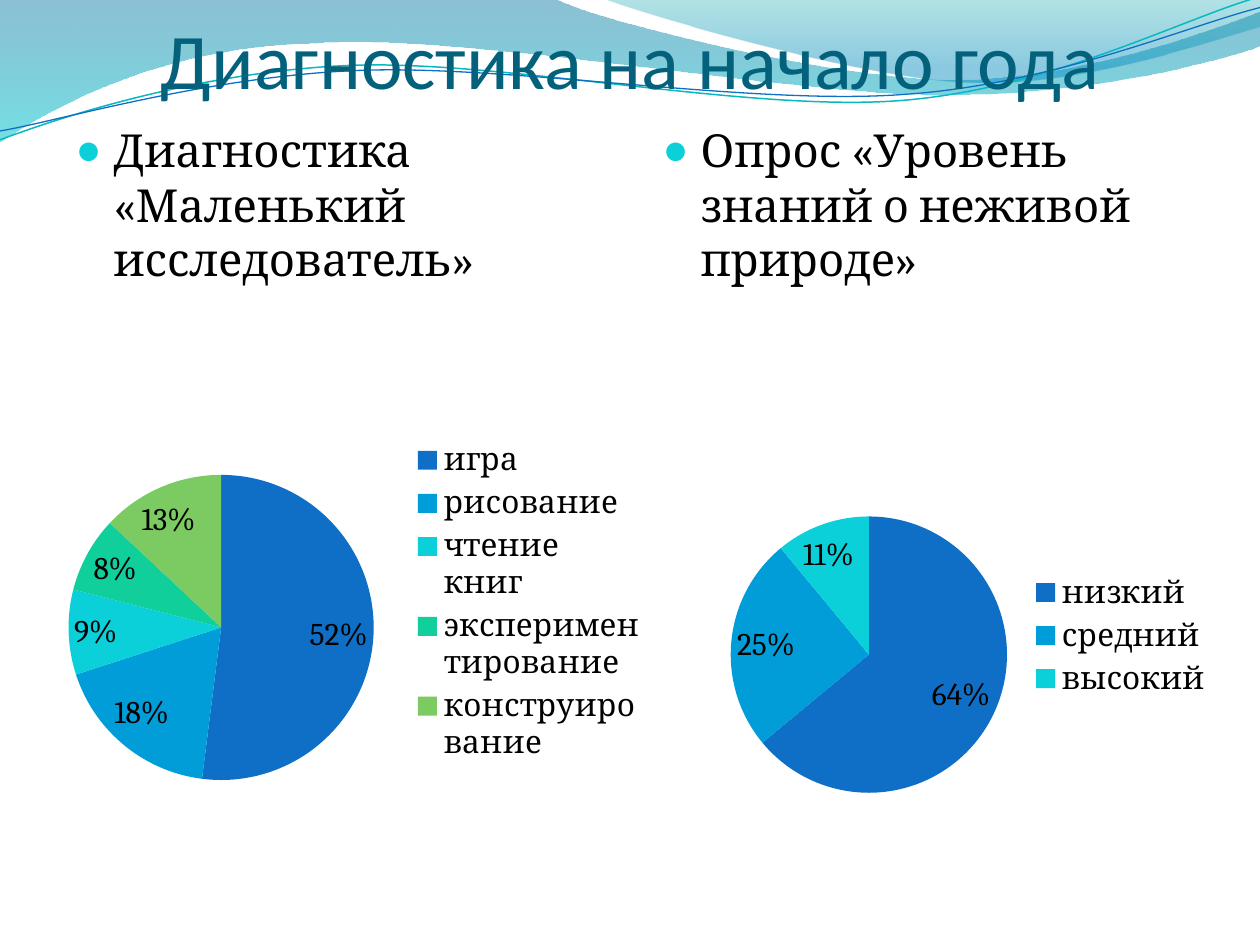
from lxml import etree
from pptx import Presentation
from pptx.chart.data import CategoryChartData
from pptx.dml.color import RGBColor
from pptx.enum.chart import XL_CHART_TYPE, XL_LABEL_POSITION, XL_LEGEND_POSITION
from pptx.enum.text import MSO_ANCHOR, MSO_AUTO_SIZE, PP_ALIGN
from pptx.oxml import parse_xml
from pptx.oxml.ns import nsdecls, qn
from pptx.util import Inches, Pt

TITLE = "Диагностика на начало года"
TITLE_BOX = (0.5, 0.13, 9, 0.71)
SLICE_COLOURS = ["0F6FC6", "009DD9", "0BD0D9", "10CF9B", "7CCA62"]

# Right topic first: its chart lies behind the left one.
TOPICS = [
    {"body": 2, "heading": "Опрос «Уровень знаний о неживой природе»",
     "heading_box": (5.16, 0.92, 4.42, 5.95), "chart_box": (5.16, 2.88, 4.57, 4.33),
     "shares": {"низкий": 64, "средний": 25, "высокий": 11},
     "plot": {"x": 0.14, "y": 0.28, "w": 0.48, "h": 0.51}},
    {"body": 1, "heading": "Диагностика «Маленький исследователь»",
     "heading_box": (0.5, 0.92, 4.42, 6.03), "chart_box": (0, 2.49, 5.24, 4.57),
     "shares": {"игра": 52, "рисование": 18, "чтение книг": 9,
                "экспериментирование": 8, "конструирование": 13},
     "plot": {"x": 0.08, "y": 0.28, "w": 0.51, "h": 0.53}},
]

# A step of two numbers is a straight line, a step of six a Bézier curve.
# Gradient stops: position, colour, opacity in percent.
WAVES = [
    {"start": (0, 0), "gradient": [(0, "0074A1", 45), (1, "00C6CF", 55)],
     "steps": [(4.4, -0.01), (4.76, 0.17, 6.64, 0.63, 7.58, 0.63),
               (8.53, 0.63, 9.58, 0.26, 10, 0.09), (10.01, 0.36),
               (9.83, 0.44, 8.7, 0.76, 7.46, 0.75), (6.22, 0.75, 3.82, 0.28, 2.57, 0.34),
               (1.29, 0.36, 0.46, 0.83, -0.01, 1.13), (0, 0)]},
    {"start": (4.79, -0.01), "gradient": [(0, "00A1A9", 30), (0.8, "008BBF", 45)],
     "steps": [(5.09, 0.11, 6.82, 0.62, 7.69, 0.65), (8.56, 0.69, 9.61, 0.32, 10, 0.21),
               (10, 0), (4.79, -0.01)]},
    {"start": (0, 1.11), "line": ("0AB8BF", 0.85),
     "steps": [(0.48, 0.93, 1.58, 0.57, 2.77, 0.52), (3.95, 0.47, 5.93, 0.89, 7.13, 0.8),
               (8.33, 0.71, 9.38, 0.15, 9.98, -0.02)]},
    {"start": (0, 1.04), "line": ("0F6FC6", 0.75),
     "steps": [(0.47, 0.96, 1.64, 0.61, 2.83, 0.56), (4.03, 0.51, 5.97, 0.84, 7.17, 0.75),
               (8.36, 0.67, 9.41, 0.21, 10, 0.06)]},
]


def rgb(colour):
    return RGBColor.from_string(colour)


def style_font(font, name, size, colour):
    for key, value in {"name": name, "size": Pt(size), "bold": False}.items():
        setattr(font, key, value)
    font.color.rgb = rgb(colour)


def place(shape, box):
    for side, length in zip(("left", "top", "width", "height"), box):
        setattr(shape, side, Inches(length))


def bend(shape, steps):
    """Turn the straight segments of six-number steps into Bézier curves."""
    segments = list(shape.element.iter(qn("a:lnTo")))
    for segment, step in zip(segments, steps):
        if len(step) == 6:
            segment.tag = qn("a:cubicBezTo")
            for i, (x, y) in enumerate((step[:2], step[2:4])):
                point = etree.Element(qn("a:pt"), x=str(Inches(x) - shape.left),
                                      y=str(Inches(y) - shape.top))
                segment.insert(i, point)


def curve_parent(old):
    """Replace a straight segment by an empty curve that keeps its end point."""
    curve = etree.Element(qn("a:cubicBezTo"))
    curve.extend(list(old))
    old.getparent().replace(old, curve)
    return curve


def add_wave(slide, wave):
    start, steps = wave["start"], wave["steps"]
    closed = "gradient" in wave
    builder = slide.shapes.build_freeform(*(Inches(v) for v in start))
    ends = [tuple(Inches(v) for v in step[-2:]) for step in steps]
    builder.add_line_segments(ends, close=closed)
    shape = builder.convert_to_shape()
    bend(shape, steps)
    shape.shadow.inherit = False
    if closed:
        shape.line.fill.background()
        shape.fill.gradient()
        shape.fill.gradient_angle = 270
        for stop, (position, colour, _) in zip(shape.fill.gradient_stops, wave["gradient"]):
            stop.position = position
            stop.color.rgb = rgb(colour)
        stop_colours = list(shape.element.spPr.iter(qn("a:srgbClr")))
        for node, (_, _, opacity) in zip(stop_colours, wave["gradient"]):
            etree.SubElement(node, qn("a:alpha"), val=str(opacity * 1000))
    else:
        colour, width = wave["line"]
        shape.fill.background()
        shape.line.color.rgb = rgb(colour)
        shape.line.width = Pt(width)
    slide.shapes.title.element.addprevious(shape.element)


def fill_title(title):
    place(title, TITLE_BOX)
    frame = title.text_frame
    frame.text = TITLE
    layout = {"margin_left": 0, "margin_right": 0, "margin_bottom": 0,
              "margin_top": Inches(0.05), "vertical_anchor": MSO_ANCHOR.BOTTOM,
              "auto_size": MSO_AUTO_SIZE.NONE}
    for key, value in layout.items():
        setattr(frame, key, value)
    frame.paragraphs[0].alignment = PP_ALIGN.CENTER
    style_font(frame.paragraphs[0].runs[0].font, "Calibri", 45, "04617B")


def fill_heading(body, topic):
    place(body, topic["heading_box"])
    body.text_frame.text = topic["heading"]
    body.text_frame.auto_size = MSO_AUTO_SIZE.NONE
    paragraph = body.text_frame.paragraphs[0]
    style_font(paragraph.runs[0].font, "Cambria", 26, "000000")
    props = paragraph._p.get_or_add_pPr()
    props.set("marL", str(Inches(0.3)))
    props.set("indent", str(-Inches(0.3)))
    bullet_colour = etree.SubElement(props, qn("a:buClr"))
    etree.SubElement(bullet_colour, qn("a:srgbClr"), val="0BD0D9")
    etree.SubElement(props, qn("a:buSzPct"), val="95000")
    etree.SubElement(props, qn("a:buChar"), char="●")


def add_pie(slide, topic):
    data = CategoryChartData()
    data.categories = list(topic["shares"])
    data.add_series("Series 1", list(topic["shares"].values()))
    box = [Inches(length) for length in topic["chart_box"]]
    chart = slide.shapes.add_chart(XL_CHART_TYPE.PIE, *box, data).chart
    style_font(chart.font, "Cambria", 18, "000000")
    chart.has_title = False
    chart.has_legend = True
    chart.legend.position = XL_LEGEND_POSITION.RIGHT
    chart.legend.include_in_layout = False
    pie = chart.plots[0]
    pie.vary_by_categories = True
    pie.has_data_labels = True
    labels = {"show_percentage": True, "show_value": False, "number_format": "0%",
              "number_format_is_linked": False, "position": XL_LABEL_POSITION.BEST_FIT}
    for key, value in labels.items():
        setattr(pie.data_labels, key, value)
    for i, colour in enumerate(SLICE_COLOURS[:len(topic["shares"])]):
        fill = pie.series[0].points[i].format.fill
        fill.solid()
        fill.fore_color.rgb = rgb(colour)
    set_plot_area(chart, topic["plot"])


def set_plot_area(chart, shares):
    """Fix the inner plot area, given as shares of the chart's size."""
    modes = '<c:layoutTarget val="inner"/><c:xMode val="edge"/><c:yMode val="edge"/>'
    sizes = "".join(f'<c:{key} val="{value}"/>' for key, value in shares.items())
    area = chart.element.find(".//" + qn("c:plotArea"))
    for old in area.findall(qn("c:layout")):
        area.remove(old)
    area.insert(0, parse_xml(f'<c:layout {nsdecls("c")}><c:manualLayout>{modes}{sizes}'
                             "</c:manualLayout></c:layout>"))


def main():
    deck = Presentation()
    deck.slide_width, deck.slide_height = Inches(10), Inches(7.5)
    slide = deck.slides.add_slide(deck.slide_layouts.get_by_name("Two Content"))
    for wave in WAVES:
        add_wave(slide, wave)
    fill_title(slide.shapes.title)
    for topic in TOPICS:
        fill_heading(slide.placeholders[topic["body"]], topic)
        add_pie(slide, topic)
    deck.save("out.pptx")


if __name__ == "__main__":
    main()
